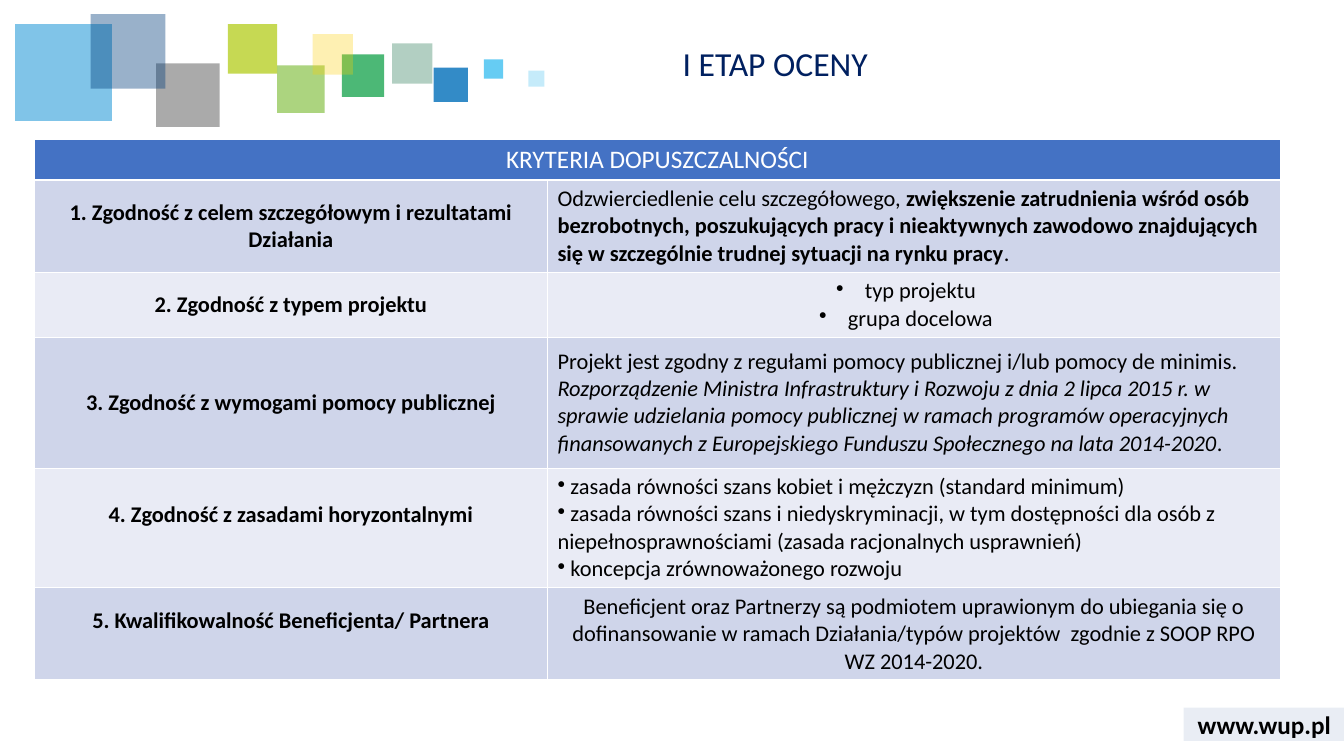
from lxml.etree import SubElement
from pptx import Presentation
from pptx.dml.color import RGBColor
from pptx.enum.shapes import MSO_SHAPE as SHAPE
from pptx.enum.text import MSO_ANCHOR as ANCHOR, PP_ALIGN as ALIGN
from pptx.oxml.ns import qn
from pptx.util import Inches, Pt

FONT = "Calibri"
BLACK = RGBColor(0x00, 0x00, 0x00)
WHITE = RGBColor(0xFF, 0xFF, 0xFF)
NAVY = RGBColor(0x00, 0x20, 0x60)
HEADER = RGBColor(0x44, 0x72, 0xC4)
BANDS = [RGBColor(0xCF, 0xD5, 0xEA), RGBColor(0xE9, 0xEB, 0xF5)]
FOOTER = RGBColor(0x2F, 0x55, 0x97)
SKY = RGBColor(0x40, 0xC0, 0xF1)

TITLE = "I ETAP OCENY"
WEBSITE = "www.wup.pl"
TABLE_HEADER = "KRYTERIA DOPUSZCZALNOŚCI"

SQUARES = [
    (3.89, 0.43, 0.4, RGBColor(0x00, 0x61, 0x38), 30),
    (4.3, 0.67, 0.34, RGBColor(0x00, 0x6E, 0xB9), 80),
    (3.39, 0.54, 0.42, RGBColor(0x00, 0x9A, 0x3C), 70),
    (0.15, 0.24, 0.96, RGBColor(0x02, 0x8B, 0xD3), 50),
    (2.75, 0.65, 0.47, RGBColor(0x75, 0xB8, 0x2A), 60),
    (1.55, 0.63, 0.63, RGBColor(0x57, 0x57, 0x57), 50),
    (0.9, 0.14, 0.74, RGBColor(0x00, 0x3D, 0x7C), 40),
    (4.8, 0.59, 0.19, SKY, 80),
    (2.26, 0.24, 0.49, RGBColor(0xAF, 0xCA, 0x0B), 70),
    (3.1, 0.34, 0.4, RGBColor(0xFE, 0xD0, 0x00), 30),
    (5.24, 0.7, 0.16, SKY, 30),
]

COLUMNS = [5.09, 7.27]
ROWS = [0.39, 0.89, 0.62, 1.3, 1.15, 0.89]

CRITERIA = [
    {"name": "1. Zgodność z celem szczegółowym i rezultatami Działania",
     "details": [[("Odzwierciedlenie celu szczegółowego, ", ""),
                  ("zwiększenie zatrudnienia wśród osób bezrobotnych, poszukujących pracy "
                   "i nieaktywnych zawodowo znajdujących się w szczególnie trudnej sytuacji "
                   "na rynku pracy", "bold"),
                  (".", "")]]},
    {"name": "2. Zgodność z typem projektu", "align": ALIGN.CENTER, "bullets": True,
     "details": [[(" typ projektu", "")], [(" grupa docelowa", "")]]},
    {"name": "3. Zgodność z wymogami pomocy publicznej",
     "details": [[("Projekt jest zgodny z regułami pomocy publicznej i/lub pomocy de minimis. ", ""),
                  ("Rozporządzenie Ministra Infrastruktury i Rozwoju z dnia 2 lipca 2015 r. "
                   "w sprawie udzielania pomocy publicznej w ramach programów operacyjnych "
                   "finansowanych z Europejskiego Funduszu Społecznego na lata 2014-2020", "italic"),
                  (".", "")]]},
    {"name": "4. Zgodność z zasadami horyzontalnymi", "bullets": True, "raise": 0.27,
     "details": [[(" zasada równości szans kobiet i mężczyzn (standard minimum)", "")],
                 [(" zasada równości szans i niedyskryminacji, w tym dostępności dla osób "
                   "z niepełnosprawnościami (zasada racjonalnych usprawnień)", "")],
                 [(" koncepcja zrównoważonego rozwoju", "")]]},
    {"name": "5. Kwalifikowalność Beneficjenta/ Partnera", "align": ALIGN.CENTER, "raise": 0.27,
     "details": [[("Beneficjent oraz Partnerzy są podmiotem uprawionym do ubiegania się "
                   "o dofinansowanie w ramach Działania/typów projektów  zgodnie z SOOP "
                   "RPO WZ 2014-2020.", "")]]},
]


def style(font, size, color, bold=False, italic=False):
    """Set the typeface, size, colour and emphasis of a font."""
    font.name, font.size, font.bold, font.italic = FONT, Pt(size), bold, italic
    font.color.rgb = color


def add_rect(s, left, top, width, height, color, opacity):
    """Add a borderless, partly transparent rectangle."""
    sp = s.shapes.add_shape(SHAPE.RECTANGLE, Inches(left), Inches(top), Inches(width), Inches(height))
    sp.shadow.inherit = False
    sp.fill.solid()
    sp.fill.fore_color.rgb = color
    sp.line.fill.background()
    rgb = sp.fill._xPr.find(".//" + qn("a:srgbClr"))
    SubElement(rgb, qn("a:alpha")).set("val", str(opacity * 1000))
    return sp


def fill_cell(cell, color, paragraphs, size, text_color, align, bullets=False):
    """Write styled paragraphs into a coloured table cell."""
    cell.fill.solid()
    cell.fill.fore_color.rgb = color
    cell.vertical_anchor = ANCHOR.MIDDLE
    tf = cell.text_frame
    for i, runs in enumerate(paragraphs):
        p = tf.add_paragraph() if i else tf.paragraphs[0]
        p.alignment = align
        if bullets:
            SubElement(p._p.get_or_add_pPr(), qn("a:buChar")).set("char", "•")
        for text, emphasis in runs:
            r = p.add_run()
            r.text = text
            style(r.font, size, text_color, emphasis == "bold", emphasis == "italic")


def add_criteria(s):
    """Build the table of criteria."""
    table = s.shapes.add_table(len(ROWS), len(COLUMNS), Inches(0.34), Inches(1.38),
                               Inches(sum(COLUMNS)), Inches(sum(ROWS))).table
    for column, width in zip(table.columns, COLUMNS):
        column.width = Inches(width)
    for row, height in zip(table.rows, ROWS):
        row.height = Inches(height)
    header = table.cell(0, 0)
    header.merge(table.cell(0, 1))
    fill_cell(header, HEADER, [[(TABLE_HEADER, "")]], 18, WHITE, ALIGN.CENTER)
    for i, item in enumerate(CRITERIA):
        band = BANDS[i % 2]
        name, details = table.rows[i + 1].cells
        fill_cell(name, band, [[(item["name"], "bold")]], 16, BLACK, ALIGN.CENTER)
        name.margin_bottom = Inches(0.05 + item.get("raise", 0))
        fill_cell(details, band, item["details"], 16, BLACK,
                  item.get("align", ALIGN.LEFT), item.get("bullets", False))


def main():
    """Build and save the slide."""
    prs = Presentation()
    prs.slide_width, prs.slide_height = Inches(13.33), Inches(7.5)
    s = prs.slides.add_slide(prs.slide_layouts[5])

    for left, top, side, color, opacity in SQUARES:
        add_rect(s, left, top, side, side, color, opacity)

    footer = add_rect(s, 11.74, 7.02, 1.6, 0.33, FOOTER, 10)
    tf = footer.text_frame
    tf.text = WEBSITE
    tf.word_wrap = False
    tf.vertical_anchor = ANCHOR.MIDDLE
    tf.paragraphs[0].alignment = ALIGN.CENTER
    style(tf.paragraphs[0].runs[0].font, 18, BLACK, bold=True)

    add_criteria(s)

    title = s.shapes.title
    title.left, title.top, title.width, title.height = map(Inches, (6.67, 0.42, 6.36, 0.55))
    tf = title.text_frame
    tf.text = TITLE
    tf.vertical_anchor = ANCHOR.TOP
    p = tf.paragraphs[0]
    p.alignment, p.line_spacing = ALIGN.LEFT, 0.9
    style(p.runs[0].font, 24, NAVY)

    prs.save("out.pptx")


if __name__ == "__main__":
    main()
